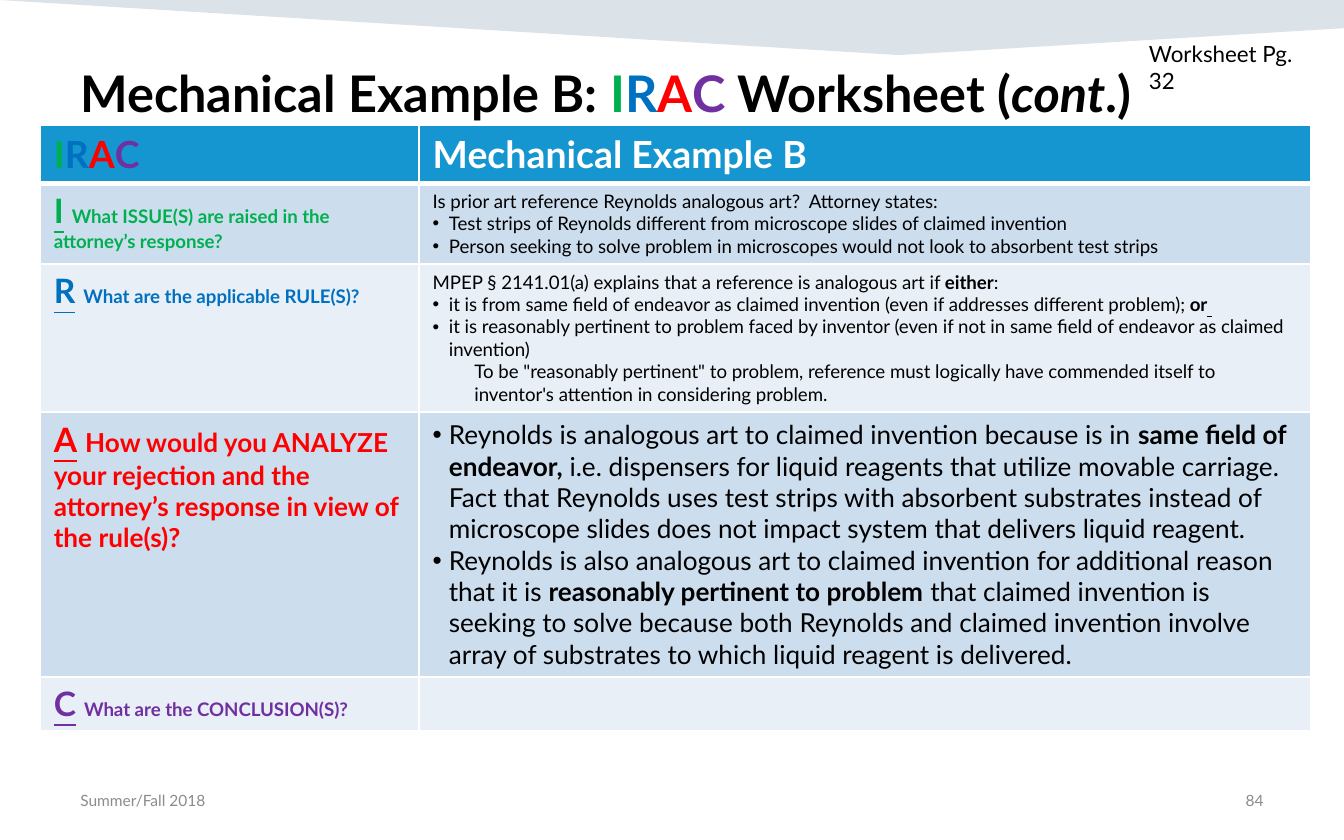
"""Build the IRAC worksheet slide for Mechanical Example B."""
from dataclasses import dataclass, field

from lxml.etree import SubElement
from pptx import Presentation
from pptx.dml.color import RGBColor
from pptx.enum.text import MSO_ANCHOR as Anchor, PP_ALIGN as Align
from pptx.oxml.ns import qn
from pptx.util import Inches, Pt

FONT = "Lato"
BLACK, WHITE, GREY = "000000", "FFFFFF", "8C8C8C"
GREEN, BLUE, RED, PURPLE = "00B050", "0070C0", "FF0000", "7030A0"
HEADER, BANDS = "1596D1", ("CCDDEE", "E8EFF7")
LETTERS = dict(zip("IRAC", (GREEN, BLUE, RED, PURPLE)))


@dataclass
class Span:
    text: str
    style: dict = field(default_factory=dict)


@dataclass
class Para:
    spans: list[Span]
    indent: float = 0
    bullet: bool = False
    align: Align = Align.LEFT


@dataclass
class Row:
    letter: str
    question: str
    size: float
    height: float
    answer: list[Para]


def rgb(value: str) -> RGBColor:
    return RGBColor.from_string(value)


def bold(text: str) -> Span:
    return Span(text, {"bold": True})


def plain(text: str, **layout) -> Para:
    return Para([Span(text)], **layout)


def bullet(*spans: Span) -> Para:
    return Para(list(spans), 0.12, True)


def irac_spans() -> list[Span]:
    return [Span(letter, {"color": color}) for letter, color in LETTERS.items()]


def write(frame, paras: list[Para], **base) -> None:
    frame.word_wrap = True
    for index, item in enumerate(paras):
        para = frame.paragraphs[0] if index == 0 else frame.add_paragraph()
        para.alignment = item.align
        if item.indent:
            props = para._p.get_or_add_pPr()
            props.set("marL", str(Inches(item.indent)))
            props.set("indent", str(Inches(-item.indent if item.bullet else 0)))
            if item.bullet:
                SubElement(props, qn("a:buFont"), typeface="Arial")
                SubElement(props, qn("a:buChar"), char="•")
        for part in item.spans:
            span = para.add_run()
            span.text = part.text
            style = {"name": FONT, "bold": False, "color": BLACK, **base, **part.style}
            span.font.color.rgb = rgb(style.pop("color"))
            style["size"] = Pt(style["size"])
            for name, value in style.items():
                setattr(span.font, name, value)


def add_text(page, area: tuple, para: Para, anchor: Anchor = Anchor.TOP, **base):
    box = page.shapes.add_textbox(*map(Inches, area))
    box.text_frame.vertical_anchor = anchor
    write(box.text_frame, [para], **base)
    return box


def add_banner(page) -> None:
    builder = page.shapes.build_freeform(0, 0)
    corners = [(10, 0), (10, 0.21), (6.69, 0.41)]
    builder.add_line_segments([(Inches(x), Inches(y)) for x, y in corners])
    banner = builder.convert_to_shape()
    banner.shadow.inherit = False
    banner.line.fill.background()
    banner.fill.solid()
    banner.fill.fore_color.rgb = rgb("164469")
    color = banner._element.spPr.find(qn("a:solidFill"))[0]
    SubElement(color, qn("a:alpha"), val="15000")


def style_cell(cell, fill: str, top: float, bottom: float) -> None:
    props = cell._tc.get_or_add_tcPr()
    for side, width in {"L": 1, "R": 1, "T": top, "B": bottom}.items():
        line = SubElement(props, qn(f"a:ln{side}"), w=str(Pt(width)))
        SubElement(SubElement(line, qn("a:solidFill")), qn("a:srgbClr"), val=WHITE)
    cell.fill.solid()
    cell.fill.fore_color.rgb = rgb(fill)


def add_worksheet(page, rows: list[Row]) -> None:
    heights = [0.43] + [row.height for row in rows]
    table = page.shapes.add_table(
        len(heights), 2, Inches(0.3), Inches(0.93), Inches(9.45), Inches(sum(heights))
    ).table
    for column, width in zip(table.columns, (2.82, 6.63)):
        column.width = Inches(width)
    for index, height in enumerate(heights):
        table.rows[index].height = Inches(height)
        fill = BANDS[(index - 1) % 2] if index else HEADER
        for cell in table.rows[index].cells:
            style_cell(cell, fill, 3 if index == 1 else 1, 1 if index else 3)
    write(table.cell(0, 0).text_frame, [Para(irac_spans())], size=20, bold=True)
    write(table.cell(0, 1).text_frame, [plain("Mechanical Example B")],
          size=20, bold=True, color=WHITE)
    for index, row in enumerate(rows, 1):
        prompt = Para([
            Span(row.letter, {"size": 18, "underline": True}),
            Span(" ", {"size": 18}),
            Span(row.question),
        ])
        write(table.cell(index, 0).text_frame, [prompt],
              size=row.size, bold=True, color=LETTERS[row.letter])
        write(table.cell(index, 1).text_frame, row.answer, size=row.size)


ROWS = [
    Row("I", "What ISSUE(S) are raised in the attorney’s response?", 10, 0.6, [
        plain("Is prior art reference Reynolds analogous art?  Attorney states:"),
        bullet(Span("Test strips of Reynolds different from microscope slides of "
                    "claimed invention")),
        bullet(Span("Person seeking to solve problem in microscopes would not look to "
                    "absorbent test strips")),
    ]),
    Row("R", "What are the applicable RULE(S)?", 10, 1.1, [
        Para([Span("MPEP § 2141.01(a) explains that a reference is analogous art if "),
              bold("either"), Span(":")]),
        bullet(Span("it is from same field of endeavor as claimed invention (even if "
                    "addresses different problem); "),
               bold("or"), Span(" ", {"underline": True})),
        bullet(Span("it is reasonably pertinent to problem faced by inventor (even if not "
                    "in same field of endeavor as claimed invention)")),
        plain('To be "reasonably pertinent" to problem, reference must logically have '
              "commended itself to inventor's attention in considering problem.",
              indent=0.31),
    ]),
    Row("A", "How would you ANALYZE your rejection and the attorney’s response in view of "
        "the rule(s)?", 14, 1.96, [
            bullet(Span("Reynolds is analogous art to claimed invention because is in "),
                   bold("same field of endeavor,"),
                   Span(" i.e. dispensers for liquid reagents that utilize movable "
                        "carriage. Fact that Reynolds uses test strips with absorbent "
                        "substrates instead of microscope slides does not impact system "
                        "that delivers liquid reagent.")),
            bullet(Span("Reynolds is also analogous art to claimed invention for "
                        "additional reason that it is "),
                   bold("reasonably pertinent to problem"),
                   Span(" that claimed invention is seeking to solve because both Reynolds "
                        "and claimed invention involve array of substrates to which liquid "
                        "reagent is delivered.")),
        ]),
    Row("C", "What are the CONCLUSION(S)?", 10, 0.4, []),
]


def main() -> None:
    deck = Presentation()
    deck.slide_width, deck.slide_height = Inches(10), Inches(6.25)
    page = deck.slides.add_slide(deck.slide_layouts[6])
    add_banner(page)
    note = add_text(page, (8.45, 0.25, 1.49, 0.5), plain("Worksheet Pg. 32"), size=12)
    note.text_frame.margin_right = Inches(0.15)
    title = [Span("Mechanical Example B: "), *irac_spans(), Span(" Worksheet ("),
             Span("cont", {"italic": True}), Span(".)")]
    add_text(page, (0.5, 0.41, 9, 0.69), Para(title), size=27, bold=True)
    add_worksheet(page, ROWS)
    footer = {"anchor": Anchor.MIDDLE, "size": 8.3, "color": GREY}
    add_text(page, (7.17, 5.79, 2.33, 0.33), plain("84", align=Align.RIGHT), **footer)
    add_text(page, (0.5, 5.79, 2.33, 0.33), plain("Summer/Fall 2018"), **footer)
    deck.save("out.pptx")


if __name__ == "__main__":
    main()
